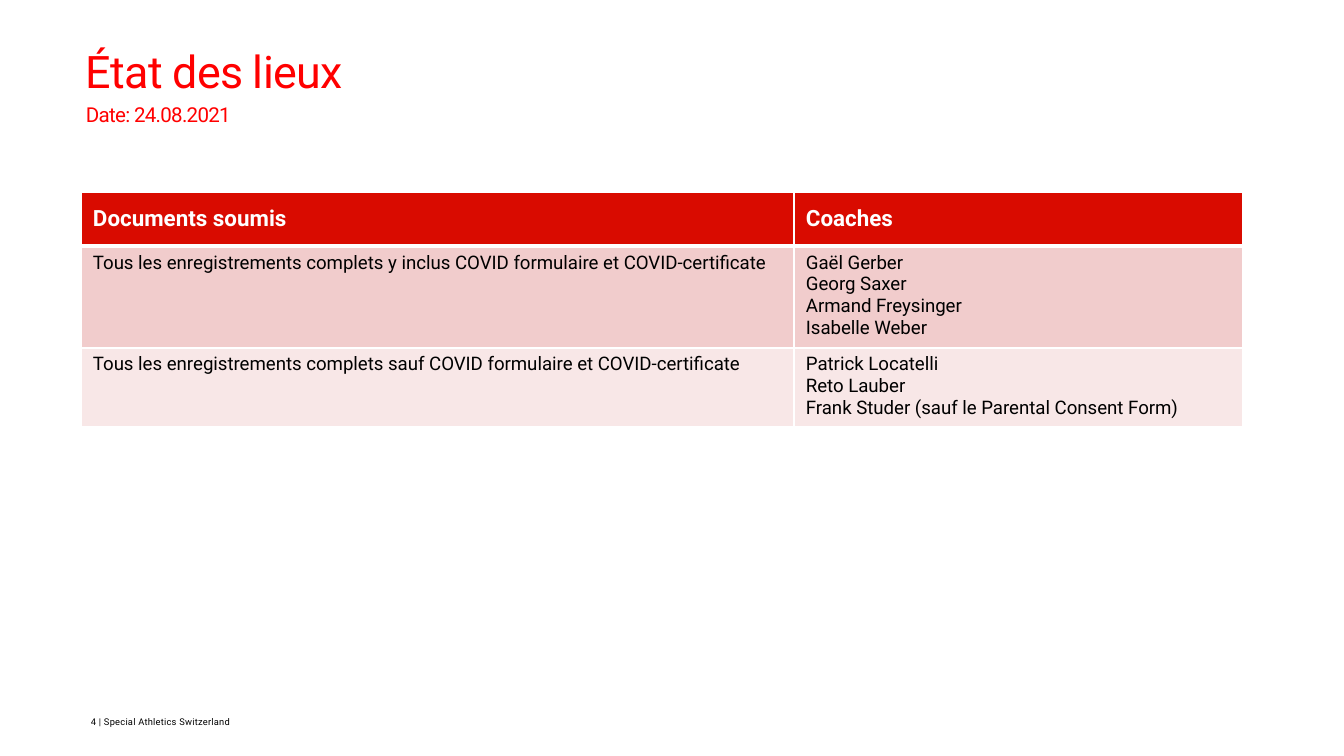
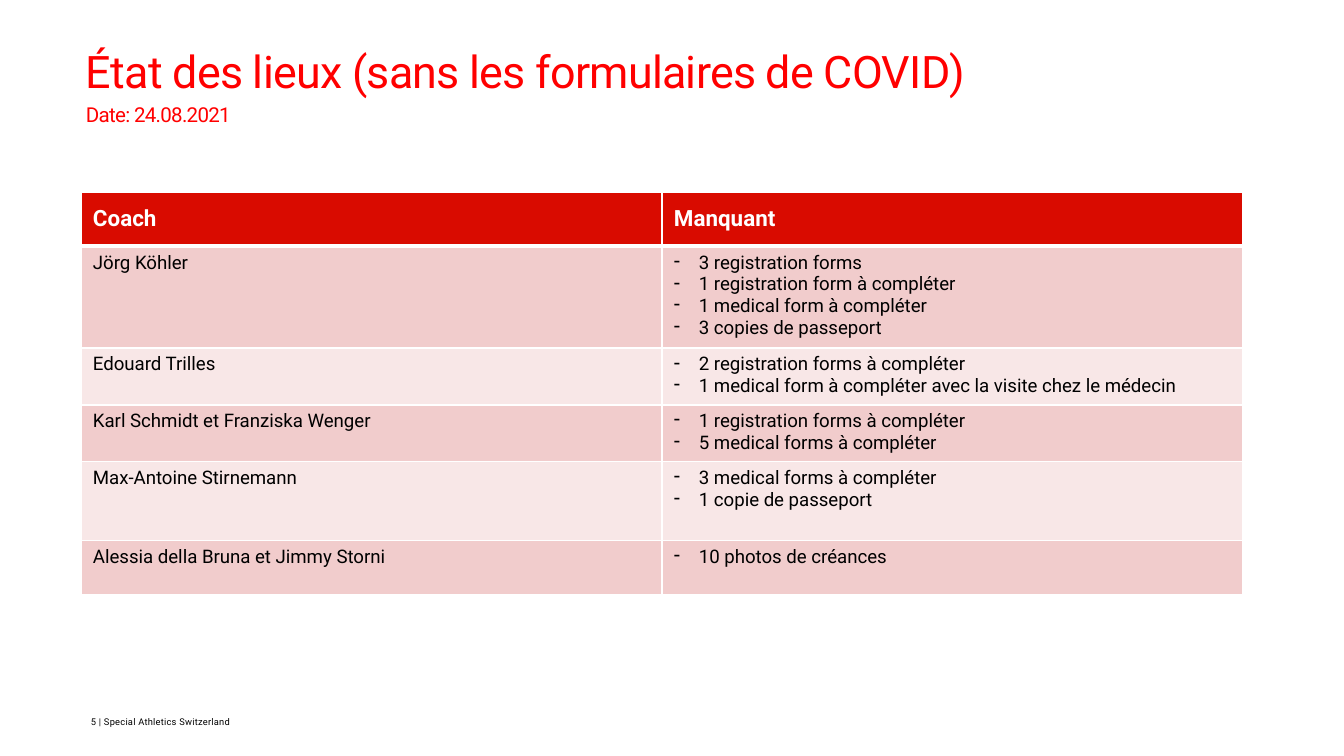
import pptx
import pptx.util
import pptx.dml.color
import pptx.enum.text
import pptx.oxml.ns
import lxml.etree

# Content: rows hold (left text, right lines, height in px)
DATE = "Date: 24.08.2021"
FOOT = "Special Athletics Switzerland"
SLIDES = [
    dict(num=4, title="État des lieux", head=("Documents soumis", "Coaches"),
         cols=(713, 449), dash=False, rows=[
        ("Tous les enregistrements complets y inclus COVID formulaire et COVID-certificate",
         ["Gaël Gerber", "Georg Saxer", "Armand Freysinger", "Isabelle Weber"], 100),
        ("Tous les enregistrements complets sauf COVID formulaire et COVID-certificate",
         ["Patrick Locatelli", "Reto Lauber",
          "Frank Studer (sauf le Parental Consent Form)"], 78),
    ]),
    dict(num=5, title="État des lieux (sans les formulaires de COVID)",
         head=("Coach", "Manquant"), cols=(581, 581), dash=True, rows=[
        ("Jörg Köhler",
         ["3 registration forms", "1 registration form à compléter",
          "1 medical form à compléter", "3 copies de passeport"], 100),
        ("Edouard Trilles",
         ["2 registration forms à compléter",
          "1 medical form à compléter avec la visite chez le médecin"], 57),
        ("Karl Schmidt et Franziska Wenger",
         ["1 registration forms à compléter", "5 medical forms à compléter"], 57),
        ("Max-Antoine Stirnemann",
         ["3 medical forms à compléter", "1 copie de passeport"], 79),
        ("Alessia della Bruna et Jimmy Storni", ["10 photos de créances"], 54),
    ]),
]

# Shared style
RGB = pptx.dml.color.RGBColor
WHITE, BLACK = RGB(255, 255, 255), RGB(0, 0, 0)
RED, DARK = RGB(255, 0, 0), RGB(0xD9, 0x0B, 0x00)
BANDS = RGB(0xF1, 0xCC, 0xCC), RGB(0xF8, 0xE7, 0xE7)
FONT = "Roboto"
HEAD = 54
INDENT = 25
ANCHOR = pptx.enum.text.MSO_ANCHOR
SCALE = 914400 / 134.4
qn = pptx.oxml.ns.qn


def px(n):
    return pptx.util.Emu(round(n * SCALE))


def style(font, size, color, bold=False):
    font.color.rgb = color
    values = {"name": FONT, "size": pptx.util.Pt(size), "bold": bold}
    for key, value in values.items():
        setattr(font, key, value)


def add_run(para, text, size, color, space):
    run = para.add_run()
    run.text = text
    style(run.font, size, color)
    run.font._element.set("spc", str(space))


def add_box(slide, left, top, width, height, pad, anchor):
    frame = slide.shapes.add_textbox(*map(px, (left, top, width, height))).text_frame
    values = {"word_wrap": True, "vertical_anchor": anchor,
              "margin_left": px(pad), "margin_right": px(pad),
              "margin_top": px(5), "margin_bottom": px(5)}
    for key, value in values.items():
        setattr(frame, key, value)
    return frame.paragraphs[0]


def add_dash(para):
    props = para._p.get_or_add_pPr()
    props.set("marL", str(px(INDENT)))
    props.set("indent", str(-px(INDENT)))
    lxml.etree.SubElement(props, qn("a:buChar")).set("char", "-")


def add_edges(cell, top, low):
    # Borders go before the fill
    props = cell._tc.get_or_add_tcPr()
    for i, (side, width) in enumerate(zip("LRTB", (1, 1, top, low))):
        line = lxml.etree.Element(qn("a:ln" + side), w=str(pptx.util.Pt(width)))
        fill = lxml.etree.SubElement(line, qn("a:solidFill"))
        lxml.etree.SubElement(fill, qn("a:srgbClr")).set("val", str(WHITE))
        props.insert(i, line)


def fill_cell(cell, lines, row, dash):
    head = row == 0
    values = {"margin_left": px(12), "margin_right": px(12),
              "margin_top": px(6), "margin_bottom": px(6),
              "vertical_anchor": ANCHOR.MIDDLE if head else ANCHOR.TOP}
    for key, value in values.items():
        setattr(cell, key, value)
    cell.fill.solid()
    cell.fill.fore_color.rgb = DARK if head else BANDS[(row - 1) % 2]
    add_edges(cell, 3 if row == 1 else 1, 3 if head else 1)
    cell.text_frame.text = "\n".join(lines)
    for para in cell.text_frame.paragraphs:
        if dash:
            add_dash(para)
        for run in para.runs:
            style(run.font, 12 if head else 10, WHITE if head else BLACK, head)


def add_grid(slide, page):
    heights = [HEAD] + [row[2] for row in page["rows"]]
    grid = slide.shapes.add_table(len(heights), 2, px(81), px(192),
                                  px(sum(page["cols"])), px(sum(heights))).table
    for col, width in zip(grid.columns, page["cols"]):
        col.width = px(width)
    for line, height in zip(grid.rows, heights):
        line.height = px(height)
    left, right = page["head"]
    rows = [(left, [right])] + [row[:2] for row in page["rows"]]
    for i, (name, lines) in enumerate(rows):
        fill_cell(grid.cell(i, 0), [name], i, False)
        fill_cell(grid.cell(i, 1), lines, i, page["dash"] and i > 0)


def add_page(deck, page):
    slide = deck.slides.add_slide(deck.slide_layouts[6])
    # Title and date
    para = add_box(slide, 81, 40, 1036, 116, 5, ANCHOR.MIDDLE)
    para.line_spacing = pptx.util.Pt(15.2)
    add_run(para, page["title"], 24, RED, -40)
    para.add_line_break()
    add_run(para, DATE, 11, RED, -40)
    # Table
    add_grid(slide, page)
    # Footer
    para = add_box(slide, 82, 711, 534, 20, 9, ANCHOR.TOP)
    add_run(para, f"{page['num']} | {FOOT}", 5, BLACK, 10)


def main():
    deck = pptx.Presentation()
    deck.slide_width, deck.slide_height = px(1344), px(756)
    for page in SLIDES:
        add_page(deck, page)
    deck.save("out.pptx")


if __name__ == "__main__":
    main()
